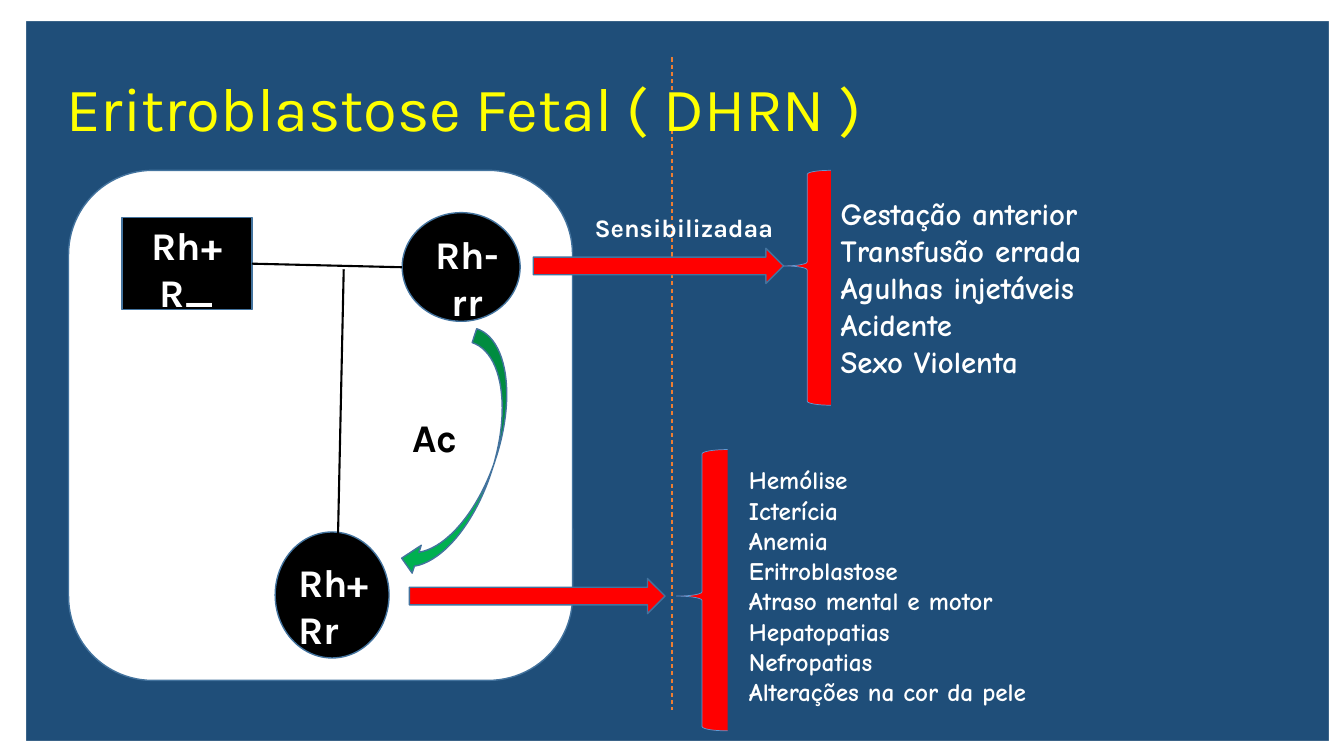
from lxml import etree
from pptx import Presentation
from pptx.dml.color import RGBColor
from pptx.enum.dml import MSO_LINE
from pptx.enum.shapes import MSO_CONNECTOR, MSO_SHAPE
from pptx.enum.text import MSO_ANCHOR, PP_ALIGN
from pptx.oxml.ns import qn
from pptx.util import Inches, Pt

RECT, ROUND, OVAL = MSO_SHAPE.RECTANGLE, MSO_SHAPE.ROUNDED_RECTANGLE, MSO_SHAPE.OVAL
ARROW, BRACE, CURVE = MSO_SHAPE.RIGHT_ARROW, MSO_SHAPE.LEFT_BRACE, MSO_SHAPE.CURVED_LEFT_ARROW
STRAIGHT, DASH = MSO_CONNECTOR.STRAIGHT, MSO_LINE.DASH
TOP, MIDDLE = MSO_ANCHOR.TOP, MSO_ANCHOR.MIDDLE
LEFT, CENTER = PP_ALIGN.LEFT, PP_ALIGN.CENTER

WHITE, BLACK, RED, EDGE = "FFFFFF", "000000", "FF0000", "43739E"
PAGE = (0, 0, 13.33, 7.5)

CAUSES = ["Gestação anterior", "Transfusão errada", "Agulhas injetáveis",
          "Acidente", "Sexo Violenta"]
EFFECTS = ["Hemólise", "Icterícia", "Anemia", "Eritroblastose",
           "Atraso mental e motor", "Hepatopatias", "Nefropatias",
           "Alterações na cor da pele"]


def color(code):
    return RGBColor.from_string(code)


def part(box, x, y, w=0, h=0):
    """Return the area inside box whose place and size are percentages of it."""
    left, top, wide, high = box
    return (left + wide * x / 100, top + high * y / 100,
            wide * w / 100, high * h / 100)


def shape(slide, kind, box, fill, edge=None, width=1):
    item = slide.shapes.add_shape(kind, *map(Inches, box))
    item.shadow.inherit = False
    item.fill.solid()
    item.fill.fore_color.rgb = color(fill)
    if edge:
        item.line.color.rgb = color(edge)
        item.line.width = Pt(width)
    else:
        item.line.fill.background()
    return item


def line(slide, start, end, tint, width):
    """Draw a straight line between the corners of two areas."""
    item = slide.shapes.add_connector(
        STRAIGHT, *map(Inches, start[:2] + end[:2]))
    item.line.color.rgb = color(tint)
    item.line.width = Pt(width)
    etree.SubElement(item._element.spPr, qn("a:effectLst"))
    return item


def text(slide, box, rows, size, tint=WHITE, face="Karla", bold=True,
         align=LEFT, anchor=TOP):
    frame = slide.shapes.add_textbox(*map(Inches, box)).text_frame
    frame.word_wrap = True
    frame.vertical_anchor = anchor
    frame.text = "\n".join(rows)
    for para in frame.paragraphs:
        para.alignment = align
        para.font.name = face
        para.font.size = Pt(size)
        para.font.bold = bold
        para.font.color.rgb = color(tint)
    return frame


def border(slide, box):
    """Draw the white edges and the dashed centre line."""
    for edge in [(0, 0, 100, 2.8), (0, 98, 100, 2),
                 (0, 0, 1.95, 100), (98.87, 0, 1.13, 100)]:
        shape(slide, RECT, part(box, *edge), WHITE)
    mid = line(slide, part(box, 50, 7.6), part(box, 50, 93.9), "ED7D31", 0.75)
    mid.line.dash_style = DASH


def title(slide, box):
    frame = text(slide, box, ["Eritroblastose Fetal ( DHRN )"], 44, "FFFF00",
                 bold=False, anchor=MIDDLE)
    frame.paragraphs[0].line_spacing = 0.9


def family(slide, box):
    """Draw the pedigree: father, mother, child and antibodies."""
    shape(slide, ROUND, box, WHITE, EDGE)
    people = [
        (OVAL, (66.2, 8.3, 23.4, 21.3), (68.6, 10.7, 21, 20.6), ["Rh-", "rr"], CENTER),
        (OVAL, (41, 70.9, 22.6, 24.7), (43.6, 75.1, 21.8, 20.6), ["Rh+", "Rr"], LEFT),
        (RECT, (10.6, 9.3, 25.8, 18), (13, 9.1, 21, 20.6), ["Rh+", "R_"], CENTER),
    ]
    for kind, area, label, rows, align in people:
        person = shape(slide, kind, part(box, *area), BLACK, EDGE)
        text(slide, part(box, *label), rows, 28, align=align)
    father = person
    bond = line(slide, part(box, 36.4, 18.3), part(box, 66.2, 19), BLACK, 1.5)
    bond.begin_connect(father, 3)
    line(slide, part(box, 53.4, 74.9), part(box, 54.6, 19.4), BLACK, 1.5)
    curve = shape(slide, CURVE, part(box, 72.8, 31.6, 11.6, 50.2), "00B050", EDGE)
    curve.rotation = 18.1
    text(slide, part(box, 66.2, 46.6, 15.4, 11.3), ["Ac"], 28, BLACK)


def panel(slide, box, cols, tip, thick, top, rows, size):
    """Draw an arrow to the brace tip, then a list beside the brace."""
    reach, start, wide, list_x = cols
    shape(slide, ARROW, part(box, 0, tip - thick / 2, reach, thick), RED, EDGE)
    brace = shape(slide, BRACE, part(box, start, 0, wide, 100), RED, "5B9BD5", 0.5)
    brace.adjustments[1] = tip / 100
    text(slide, part(box, list_x, top, 100 - list_x, 100 - top), rows, size,
         face="Comic Neue")


def main():
    deck = Presentation()
    deck.slide_width, deck.slide_height = map(Inches, PAGE[2:])
    slide = deck.slides.add_slide(deck.slide_layouts[6])
    slide.background.fill.solid()
    slide.background.fill.fore_color.rgb = color("1F4E79")
    border(slide, PAGE)
    title(slide, part(PAGE, 4.2, 5.07, 91.6, 19.33))
    family(slide, part(PAGE, 5.1, 22.53, 37.5, 67.47))
    panel(slide, part(PAGE, 39.68, 22.53, 46.9, 31.07),
          (39.7, 39.7, 7.5, 47.2), 40.7, 15, 8.2, CAUSES, 22)
    panel(slide, part(PAGE, 30.46, 59.47, 56.12, 37.2),
          (33.9, 35.4, 6.8, 43.7), 52.1, 12.5, 3.6, EFFECTS, 18)
    text(slide, part(PAGE, 43.51, 27.47, 15.2, 5.33), ["Sensibilizadaa"], 18)
    deck.save("out.pptx")


if __name__ == "__main__":
    main()
